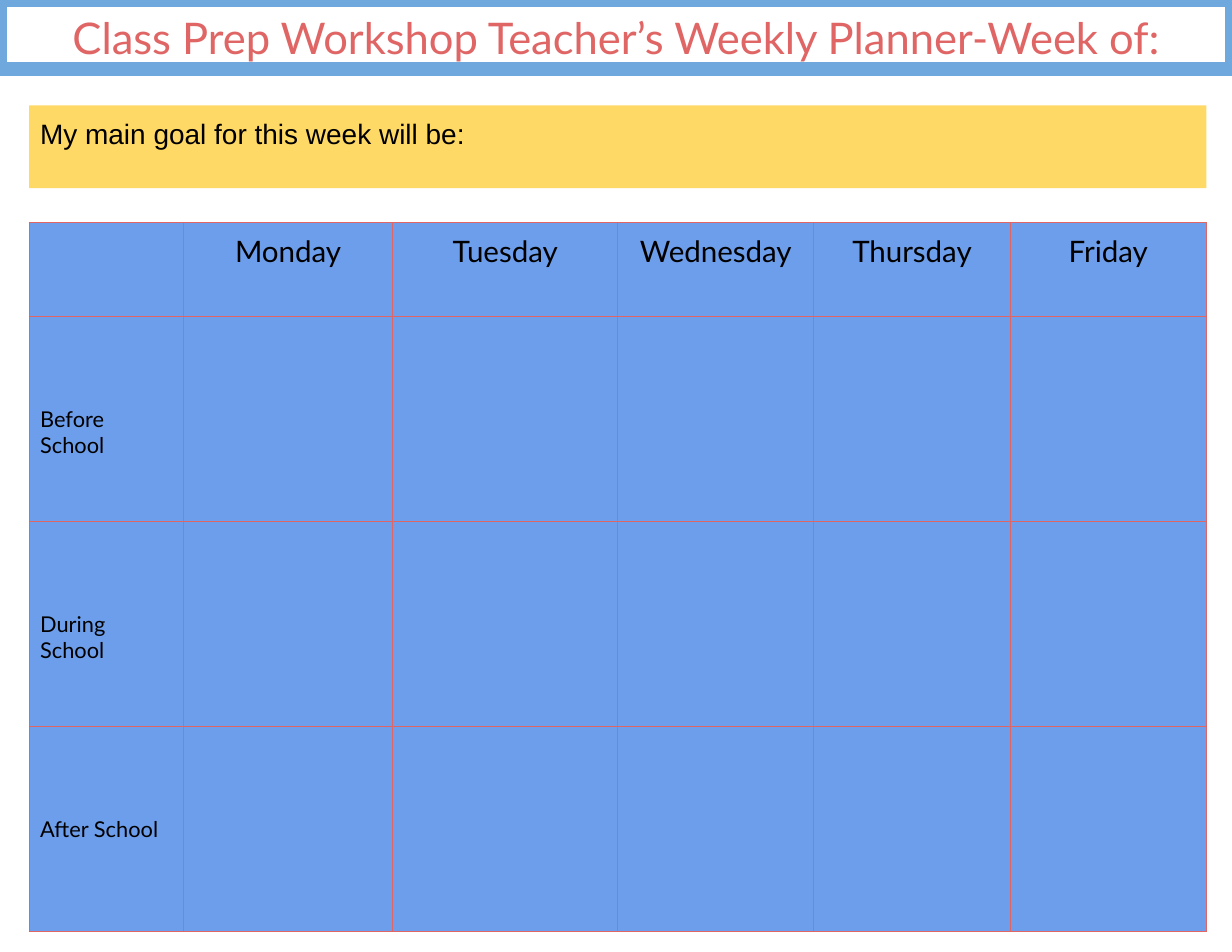
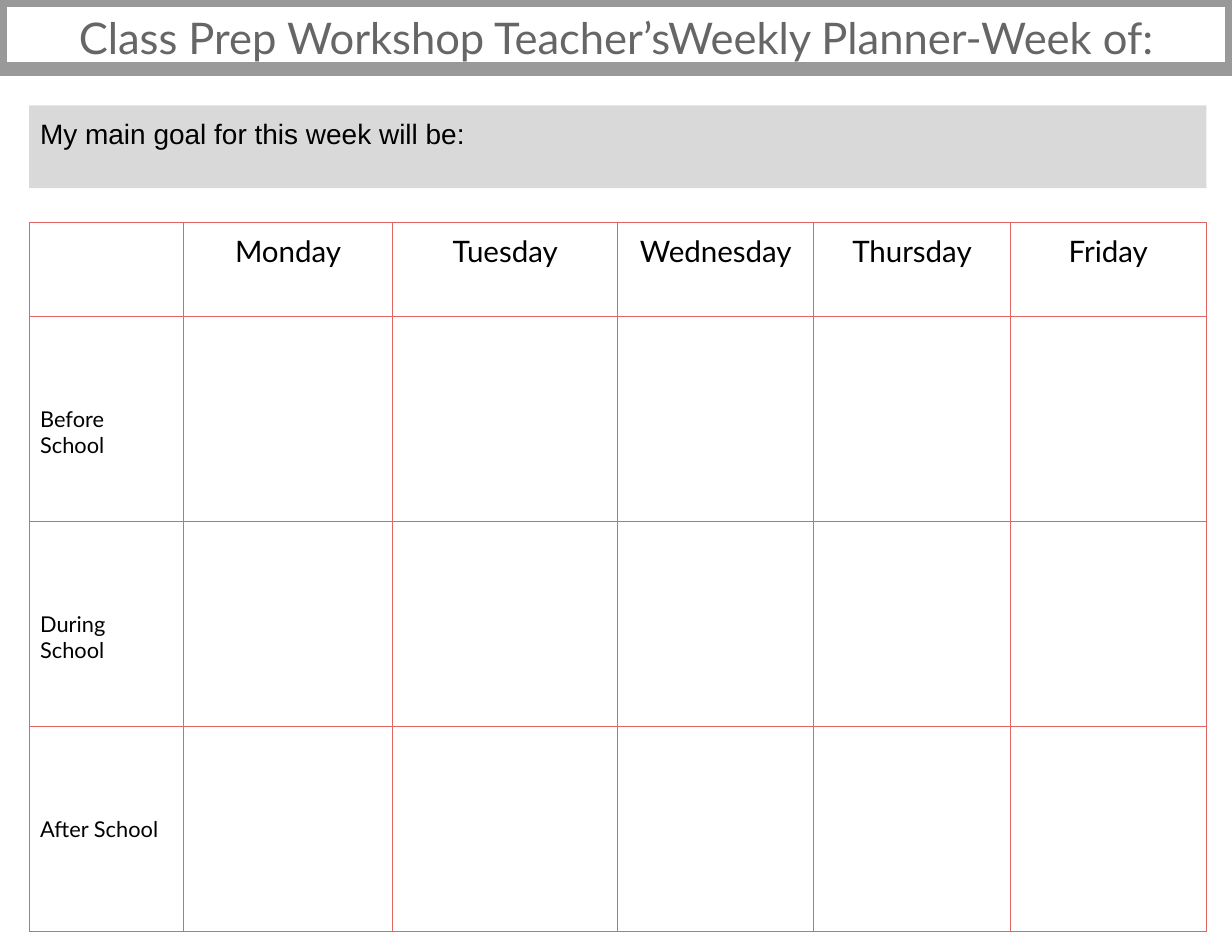
from lxml.etree import SubElement
from pptx import Presentation
from pptx.dml.color import RGBColor
from pptx.enum.shapes import MSO_SHAPE
from pptx.enum.text import MSO_ANCHOR, MSO_AUTO_SIZE, PP_ALIGN
from pptx.oxml.ns import qn
from pptx.util import Cm, Pt

GOAL = "My main goal for this week will be:"
DAYS = ["Monday", "Tuesday", "Wednesday", "Thursday", "Friday"]
PERIODS = ["Before School", "During School", "After School"]
PLANNERS = [
    {"title": "Class Prep Workshop Teacher’s Weekly Planner-Week of:",
     "frame": "6FA8DC", "heading": "E06666", "goal": "FFD966", "grid": "6D9EEB"},
    {"title": "Class Prep Workshop Teacher’sWeekly Planner-Week of:",
     "frame": "999999", "heading": "666666", "goal": "D9D9D9", "grid": None},
]
BLACK, BORDER = "000000", "E06666"
PAGE_WIDTH, PAGE_HEIGHT = 27.94, 21.59
LEFT, CONTENT_WIDTH = 0.66, 26.7
COLUMN_WIDTHS = [3.5, 4.75, 5.1] + [4.45] * 3
ROW_HEIGHTS = [2.13] + [4.65] * 3
INSET, PERIOD_DROP = 0.25, 2.03


def rgb(value):
    return RGBColor.from_string(value)


def paint(fill, color):
    if color:
        fill.solid()
        fill.fore_color.rgb = rgb(color)
    else:
        fill.background()


def set_insets(holder, top=INSET):
    holder.margin_left = holder.margin_right = holder.margin_bottom = Cm(INSET)
    holder.margin_top = Cm(top)


def write(frame, text, size, font, color=BLACK, align=PP_ALIGN.LEFT):
    paragraph = frame.paragraphs[0]
    paragraph.alignment = align
    run = paragraph.add_run()
    run.text = text
    run.font.size, run.font.name = Pt(size), font
    run.font.color.rgb = rgb(color)


def outline(cell):
    properties = cell._tc.get_or_add_tcPr()
    for side in ("lnL", "lnR", "lnT", "lnB"):
        edge = SubElement(properties, qn(f"a:{side}"), w=str(Pt(0.75)))
        solid = SubElement(edge, qn("a:solidFill"))
        SubElement(solid, qn("a:srgbClr"), val=BORDER)


def add_heading(slide, planner):
    heading = slide.shapes.title
    heading.left, heading.top = Cm(0), Cm(0)
    heading.width, heading.height = Cm(PAGE_WIDTH), Cm(1.57)
    heading.line.color.rgb = rgb(planner["frame"])
    heading.line.width = Pt(9)
    frame = heading.text_frame
    frame.auto_size = MSO_AUTO_SIZE.NONE
    frame.vertical_anchor = MSO_ANCHOR.TOP
    set_insets(frame)
    write(frame, planner["title"], 28, "Lato", planner["heading"], PP_ALIGN.CENTER)


def add_goal(slide, color):
    goal = slide.shapes.add_shape(
        MSO_SHAPE.RECTANGLE, Cm(LEFT), Cm(2.39), Cm(CONTENT_WIDTH), Cm(1.88))
    goal.shadow.inherit = False
    paint(goal.fill, color)
    goal.line.fill.background()
    goal.text_frame.vertical_anchor = MSO_ANCHOR.TOP
    set_insets(goal.text_frame)
    write(goal.text_frame, GOAL, 18, "Arial")


def add_week(slide, color):
    week = slide.shapes.add_table(
        len(ROW_HEIGHTS), len(COLUMN_WIDTHS), Cm(LEFT), Cm(5.05),
        Cm(sum(COLUMN_WIDTHS)), Cm(sum(ROW_HEIGHTS))).table
    week.first_row = week.horz_banding = False
    for column, width in zip(week.columns, COLUMN_WIDTHS):
        column.width = Cm(width)
    for row, height in zip(week.rows, ROW_HEIGHTS):
        row.height = Cm(height)
    for cell in week.iter_cells():
        outline(cell)
        paint(cell.fill, color)
        set_insets(cell)
    for index, day in enumerate(DAYS, 1):
        write(week.cell(0, index).text_frame, day, 19, "Lato", align=PP_ALIGN.CENTER)
    for index, period in enumerate(PERIODS, 1):
        cell = week.cell(index, 0)
        set_insets(cell, PERIOD_DROP)
        write(cell.text_frame, period, 14, "Lato")


def main():
    """Build the weekly planner in a colour and a grey version."""
    deck = Presentation()
    deck.slide_width, deck.slide_height = Cm(PAGE_WIDTH), Cm(PAGE_HEIGHT)
    for planner in PLANNERS:
        slide = deck.slides.add_slide(deck.slide_layouts[5])
        add_heading(slide, planner)
        add_goal(slide, planner["goal"])
        add_week(slide, planner["grid"])
    deck.save("out.pptx")


if __name__ == "__main__":
    main()
